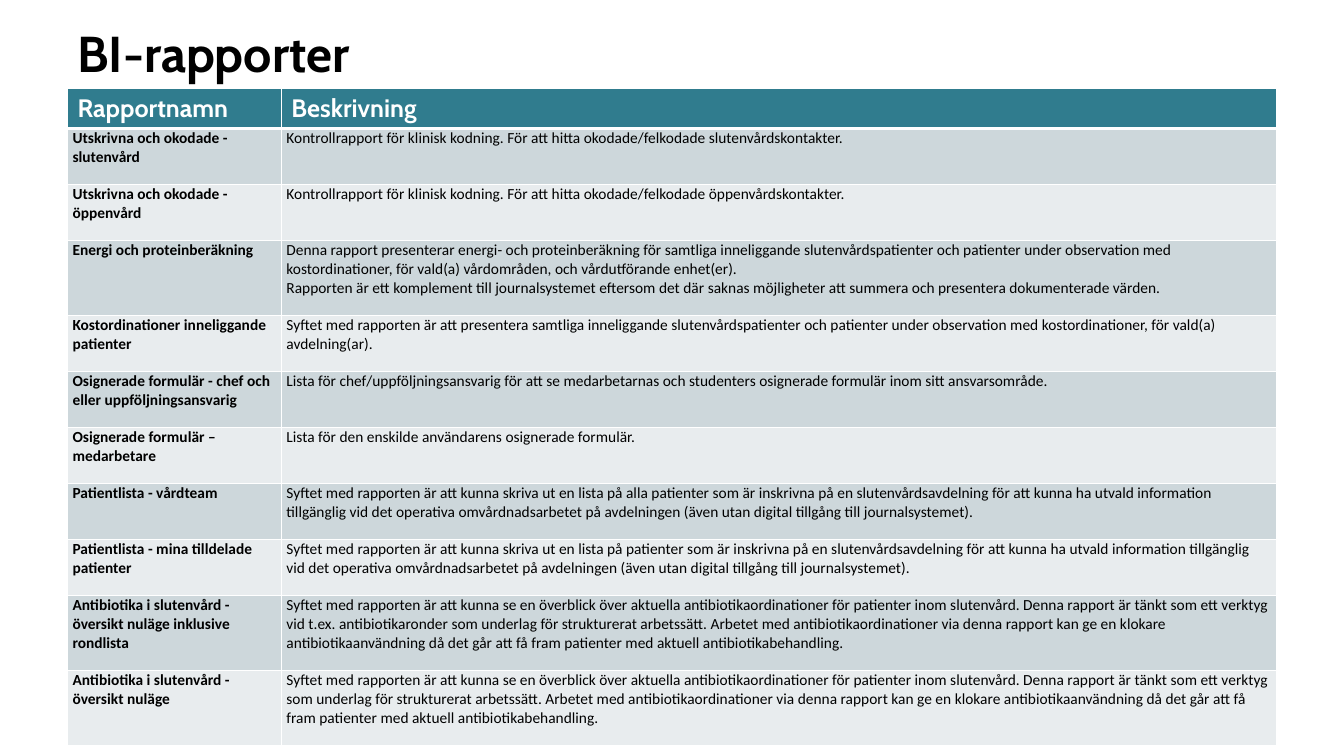
from copy import deepcopy

from lxml import etree
from pptx import Presentation
from pptx.dml.color import RGBColor
from pptx.enum import text
from pptx.oxml import ns
from pptx.util import Pt

TITLE = "BI-rapporter"
HEADERS = ("Rapportnamn", "Beskrivning")
SHORT, TALL = 40, 53.7
REPORTS = [
    ("Utskrivna och okodade - slutenvård",
     "Kontrollrapport för klinisk kodning. För att hitta okodade/felkodade slutenvårdskontakter.", SHORT),
    ("Utskrivna och okodade - öppenvård",
     "Kontrollrapport för klinisk kodning. För att hitta okodade/felkodade öppenvårdskontakter.", SHORT),
    ("Energi och proteinberäkning",
     "Denna rapport presenterar energi- och proteinberäkning för samtliga inneliggande "
     "slutenvårdspatienter och patienter under observation med kostordinationer, för vald(a) "
     "vårdområden, och vårdutförande enhet(er).\n"
     "Rapporten är ett komplement till journalsystemet eftersom det där saknas möjligheter att "
     "summera och presentera dokumenterade värden.", TALL),
    ("Kostordinationer inneliggande patienter",
     "Syftet med rapporten är att presentera samtliga inneliggande slutenvårdspatienter och "
     "patienter under observation med kostordinationer, för vald(a) avdelning(ar).", SHORT),
    ("Osignerade formulär - chef och eller uppföljningsansvarig",
     "Lista för chef/uppföljningsansvarig för att se medarbetarnas och studenters osignerade "
     "formulär inom sitt ansvarsområde.", SHORT),
    ("Osignerade formulär – medarbetare",
     "Lista för den enskilde användarens osignerade formulär.", SHORT),
    ("Patientlista - vårdteam",
     "Syftet med rapporten är att kunna skriva ut en lista på alla patienter som är inskrivna på "
     "en slutenvårdsavdelning för att kunna ha utvald information tillgänglig vid det operativa "
     "omvårdnadsarbetet på avdelningen (även utan digital tillgång till journalsystemet).", SHORT),
    ("Patientlista - mina tilldelade patienter",
     "Syftet med rapporten är att kunna skriva ut en lista på patienter som är inskrivna på en "
     "slutenvårdsavdelning för att kunna ha utvald information tillgänglig vid det operativa "
     "omvårdnadsarbetet på avdelningen (även utan digital tillgång till journalsystemet).", SHORT),
    ("Antibiotika i slutenvård - översikt nuläge inklusive rondlista",
     "Syftet med rapporten är att kunna se en överblick över aktuella antibiotikaordinationer för "
     "patienter inom slutenvård. Denna rapport är tänkt som ett verktyg vid t.ex. "
     "antibiotikaronder som underlag för strukturerat arbetssätt. Arbetet med "
     "antibiotikaordinationer via denna rapport kan ge en klokare antibiotikaanvändning då det "
     "går att få fram patienter med aktuell antibiotikabehandling.", TALL),
    ("Antibiotika i slutenvård - översikt nuläge",
     "Syftet med rapporten är att kunna se en överblick över aktuella antibiotikaordinationer för "
     "patienter inom slutenvård. Denna rapport är tänkt som ett verktyg som underlag för "
     "strukturerat arbetssätt. Arbetet med antibiotikaordinationer via denna rapport kan ge en "
     "klokare antibiotikaanvändning då det går att få fram patienter med aktuell "
     "antibiotikabehandling.", TALL),
]
LEFT, WIDTH, TABLE_TOP, HEADER_HEIGHT = 48.2, 864, 63, 28.8
COLUMNS = (152.8, 711.2)
TEAL, BANDS, WHITE, BLACK = "307C8E", ("CDD7DB", "E8ECEE"), "FFFFFF", "000000"
TITLE_FONT = dict(name="Cabin", size=Pt(36), bold=True)
HEADER_FONT = dict(name="Cabin", size=Pt(18), bold=True)
BODY_FONT = dict(name="Calibri", size=Pt(11))


def color(hex_value):
    return RGBColor.from_string(hex_value)


def write(tf, words, font, hex_value):
    """Fill the frame with one paragraph; a newline becomes a line break."""
    p = tf.paragraphs[0]
    p.text = words
    for r in p.runs:
        for key, value in font.items():
            setattr(r.font, key, value)
        r.font.color.rgb = color(hex_value)
    for br in p._p.findall(ns.qn("a:br")):
        br.append(deepcopy(p.runs[0].font._element))
    return p


def set_borders(cell, **widths):
    tc_pr = cell._tc.get_or_add_tcPr()
    for side, width in widths.items():
        ln = etree.SubElement(tc_pr, ns.qn("a:ln" + side), w=str(Pt(width)))
        fill = etree.SubElement(ln, ns.qn("a:solidFill"))
        etree.SubElement(fill, ns.qn("a:srgbClr"), val=WHITE)


def fill_cell(cell, words, font, text_color, background, top=1, bottom=1):
    set_borders(cell, L=1, R=1, T=top, B=bottom)
    cell.fill.solid()
    cell.fill.fore_color.rgb = color(background)
    write(cell.text_frame, words, font, text_color)


prs = Presentation()
prs.slide_width, prs.slide_height = Pt(960), Pt(540)
s = prs.slides.add_slide(prs.slide_layouts[6])

tf = s.shapes.add_textbox(Pt(LEFT), Pt(6), Pt(WIDTH), Pt(59)).text_frame
tf.word_wrap = True
tf.vertical_anchor = text.MSO_ANCHOR.MIDDLE
write(tf, TITLE, TITLE_FONT, BLACK).line_spacing = 1.1

heights = [HEADER_HEIGHT] + [height for _, _, height in REPORTS]
table = s.shapes.add_table(len(heights), len(COLUMNS), Pt(LEFT), Pt(TABLE_TOP),
                           Pt(WIDTH), Pt(sum(heights))).table
for column, width in zip(table.columns, COLUMNS):
    column.width = Pt(width)
for row, height in zip(table.rows, heights):
    row.height = Pt(height)

for col, header in enumerate(HEADERS):
    fill_cell(table.cell(0, col), header, HEADER_FONT, WHITE, TEAL, bottom=3)
for row, report in enumerate(REPORTS, 1):
    for col, words in enumerate(report[:2]):
        cell = table.cell(row, col)
        cell.margin_left = cell.margin_right = Pt(3.6)
        cell.margin_top = cell.margin_bottom = 0
        fill_cell(cell, words, dict(BODY_FONT, bold=col == 0), BLACK,
                  BANDS[(row - 1) % 2], top=3 if row == 1 else 1)

prs.save("out.pptx")
